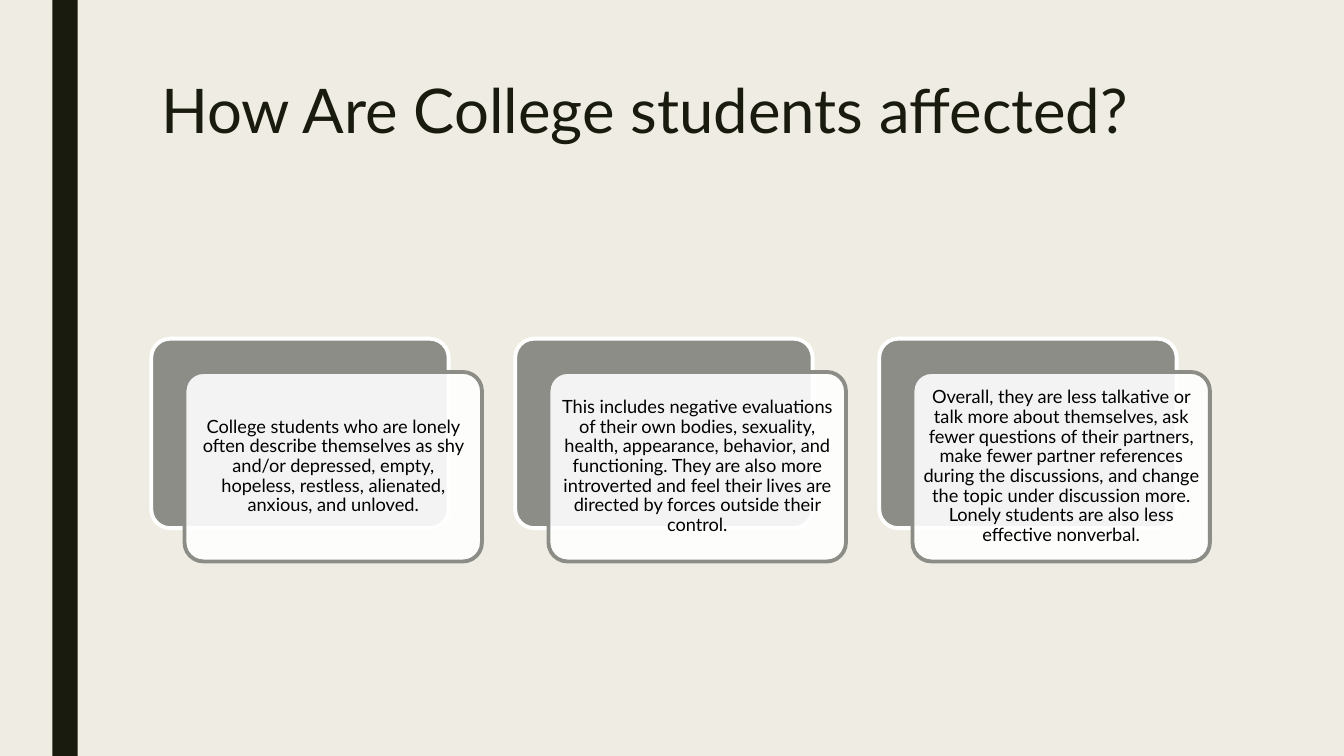
from dataclasses import dataclass

from lxml import etree
from pptx import Presentation
from pptx.dml.color import RGBColor
from pptx.enum.shapes import MSO_SHAPE
from pptx.enum.text import MSO_ANCHOR, MSO_AUTO_SIZE, PP_ALIGN
from pptx.oxml.ns import qn
from pptx.shapes.autoshape import Shape
from pptx.slide import Slide
from pptx.text.text import TextFrame
from pptx.util import Emu, Pt

RECTANGLE = MSO_SHAPE.RECTANGLE
ROUNDED = MSO_SHAPE.ROUNDED_RECTANGLE
TOP, MIDDLE = MSO_ANCHOR.TOP, MSO_ANCHOR.MIDDLE
LEFT, CENTER = PP_ALIGN.LEFT, PP_ALIGN.CENTER
NO_FIT = MSO_AUTO_SIZE.NONE
TITLE_ONLY = 5
EMU_PER_PX = 9144


@dataclass(frozen=True)
class Theme:
    font: str = "Lato"
    background: str = "EFEDE3"
    dark: str = "191B0E"
    gray: str = "8C8D86"
    white: str = "FFFFFF"
    black: str = "000000"
    title_size: int = 44
    body_size: int = 13
    line_width: float = 2.75
    card_opacity: int = 90


@dataclass(frozen=True)
class Box:
    left: int
    top: int
    width: int
    height: int

    def shifted(self, right: int, down: int = 0) -> "Box":
        return Box(self.left + right, self.top + down, self.width, self.height)


THEME = Theme()
PAGE = Box(0, 0, 1333, 750)
STRIPE = Box(52, 0, 25, 750)
TITLE = Box(150, 75, 1050, 162)
FIRST_CARD = Box(150, 336, 295, 188)
CARD_STEP = 361
CARD_OFFSET = 33
CORNER = 0.1

HEADING = "How Are College students affected?"
EFFECTS = (
    "College students who are lonely often describe themselves as shy and/or "
    "depressed, empty, hopeless, restless, alienated, anxious, and unloved.",
    "This includes negative evaluations of their own bodies, sexuality, health, "
    "appearance, behavior, and functioning. They are also more introverted and "
    "feel their lives are directed by forces outside their control.",
    "Overall, they are less talkative or talk more about themselves, ask fewer "
    "questions of their partners, make fewer partner references during the "
    "discussions, and change the topic under discussion more. Lonely students "
    "are also less effective nonverbal.",
)


def px(length: int) -> Emu:
    return Emu(length * EMU_PER_PX)


def color(value: str) -> RGBColor:
    return RGBColor.from_string(value)


def place(shape: Shape, box: Box) -> None:
    shape.left, shape.top = px(box.left), px(box.top)
    shape.width, shape.height = px(box.width), px(box.height)


def write_text(frame: TextFrame, text: str, *, size: int, ink: str,
               align: PP_ALIGN, anchor: MSO_ANCHOR, spacing: float,
               inset_x: int, inset_y: int) -> None:
    frame.word_wrap = True
    frame.auto_size = NO_FIT
    frame.vertical_anchor = anchor
    frame.margin_left = frame.margin_right = px(inset_x)
    frame.margin_top = frame.margin_bottom = px(inset_y)
    para = frame.paragraphs[0]
    para.alignment = align
    para.line_spacing = spacing
    span = para.add_run()
    span.text = text
    span.font.name = THEME.font
    span.font.size = Pt(size)
    span.font.color.rgb = color(ink)


def add_panel(page: Slide, kind: MSO_SHAPE, box: Box, fill: str,
              line: str | None = None, opacity: int = 100) -> Shape:
    panel = page.shapes.add_shape(kind, 0, 0, 0, 0)
    place(panel, box)
    panel.shadow.inherit = False
    panel.fill.solid()
    panel.fill.fore_color.rgb = color(fill)
    if opacity < 100:
        tint = panel.fill._xPr.find(f"{qn('a:solidFill')}/{qn('a:srgbClr')}")
        etree.SubElement(tint, qn("a:alpha"), val=str(opacity * 1000))
    if line is None:
        panel.line.fill.background()
    else:
        panel.line.color.rgb = color(line)
        panel.line.width = Pt(THEME.line_width)
    if kind == ROUNDED:
        panel.adjustments[0] = CORNER
    return panel


def add_effect(page: Slide, box: Box, text: str) -> None:
    add_panel(page, ROUNDED, box, THEME.gray, THEME.white)
    card = add_panel(page, ROUNDED, box.shifted(CARD_OFFSET, CARD_OFFSET),
                     THEME.white, THEME.gray, THEME.card_opacity)
    write_text(card.text_frame, text, size=THEME.body_size, ink=THEME.black,
               align=CENTER, anchor=MIDDLE, spacing=0.9, inset_x=5, inset_y=5)


def main() -> None:
    deck = Presentation()
    deck.slide_width, deck.slide_height = px(PAGE.width), px(PAGE.height)
    page = deck.slides.add_slide(deck.slide_layouts[TITLE_ONLY])
    page.background.fill.solid()
    page.background.fill.fore_color.rgb = color(THEME.background)
    add_panel(page, RECTANGLE, STRIPE, THEME.dark)
    place(page.shapes.title, TITLE)
    write_text(page.shapes.title.text_frame, HEADING, size=THEME.title_size,
               ink=THEME.dark, align=LEFT, anchor=TOP, spacing=0.89,
               inset_x=10, inset_y=5)
    for index, text in enumerate(EFFECTS):
        add_effect(page, FIRST_CARD.shifted(index * CARD_STEP), text)
    deck.save("out.pptx")


if __name__ == "__main__":
    main()
